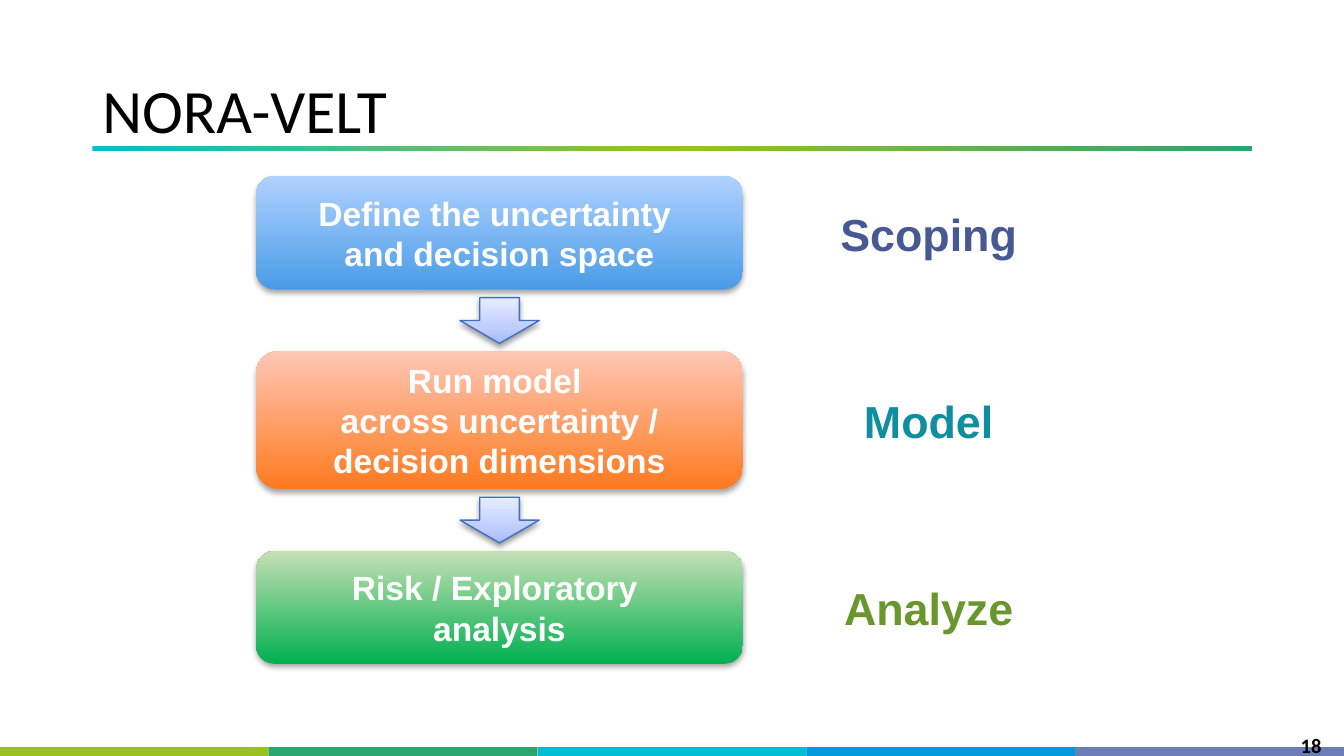
import copy
import pptx
import pptx.util
import pptx.dml.color
import pptx.enum.shapes
import pptx.enum.text
from lxml import etree

Pt = pptx.util.Pt
Kind = pptx.enum.shapes.MSO_SHAPE
Align = pptx.enum.text.PP_ALIGN
Anchor = pptx.enum.text.MSO_ANCHOR
rgb = pptx.dml.color.RGBColor.from_string
NS = "http://schemas.openxmlformats.org/drawingml/2006/main"


def paint(shape, stops, angle=0, shade=0):
    """Fill with one colour or gradient stops; shade is the shadow opacity in percent."""
    shape.shadow.inherit = False
    shape.line.fill.background()
    fill = shape.fill
    if len(stops) == 1:
        fill.solid()
        fill.fore_color.rgb = rgb(stops[0][1])
    else:
        fill.gradient()
        fill.gradient_angle = angle
        nodes = shape._element.spPr.find(f".//{{{NS}}}gsLst")
        for _ in stops[2:]:
            nodes.append(copy.deepcopy(nodes[0]))
        for stop, (place, color) in zip(fill.gradient_stops, stops):
            stop.position = place / 100
            stop.color.rgb = rgb(color)
    if shade:
        effects = shape._element.spPr.find(f"{{{NS}}}effectLst")
        effects.append(etree.fromstring(
            f'<a:outerShdw xmlns:a="{NS}" blurRad="{Pt(3.1)}" dist="{Pt(1.8)}" '
            f'dir="5400000" rotWithShape="0"><a:srgbClr val="000000">'
            f'<a:alpha val="{shade * 1000}"/></a:srgbClr></a:outerShdw>'))


def write(shape, paras, size, color, font="Arial", bold=True,
          align=Align.CENTER, anchor=Anchor.MIDDLE, inset=(7.2, 3.6)):
    """Fill the text frame; a newline inside a paragraph is a line break."""
    frame = shape.text_frame
    frame.word_wrap = True
    frame.vertical_anchor = anchor
    frame.margin_left = frame.margin_right = Pt(inset[0])
    frame.margin_top = frame.margin_bottom = Pt(inset[1])
    for i, text in enumerate(paras):
        para = frame.add_paragraph() if i else frame.paragraphs[0]
        para.alignment = align
        for j, line in enumerate(text.split("\n")):
            if j:
                para.add_line_break()
            run = para.add_run()
            run.text = line
            run.font.name = font
            run.font.size = Pt(size)
            run.font.bold = bold
            run.font.color.rgb = rgb(color)


deck = pptx.Presentation()
deck.slide_width, deck.slide_height = Pt(720), Pt(405)
slide = deck.slides.add_slide(deck.slide_layouts[5])
shapes = slide.shapes

# Title and rule
title = shapes.title
title.left, title.top, title.width, title.height = Pt(49.5), Pt(21.6), Pt(621), Pt(78.3)
write(title, ["NORA-VELT"], 33, "000000", "Calibri", False, Align.LEFT, inset=(5.4, 2.7))
title.text_frame.paragraphs[0].line_spacing = 0.9
rule = shapes.add_shape(Kind.RECTANGLE, Pt(49.5), Pt(78.3), Pt(621), Pt(2.7))
paint(rule, [(0, "00BDD5"), (50, "98C31F"), (100, "27A670")])

# Footer band
for i, color in enumerate(["98C31F", "27A670", "00BDD5", "0199DD", "6B7DB7"]):
    band = shapes.add_shape(Kind.RECTANGLE, Pt(144 * i), Pt(400.3), Pt(144), Pt(4.7))
    paint(band, [(0, color)])

# Steps: top, height, bottom and top colours, text, stage, stage colour
steps = [
    (94.3, 60.8, "499CE7", "B0D2FF", ["Define the uncertainty \nand decision space"],
     "Scoping", "475993"),
    (188, 74, "FF7A1F", "FFC7B6",
     ["Run model \nacross uncertainty /\ndecision dimensions"], "Model", "108E9F"),
    (295.2, 60.5, "00B050", "C5E0B4", ["Risk / Exploratory ", "analysis"],
     "Analyze", "6A972D"),
]
for top, high, dark, light, text, stage, color in steps:
    box = shapes.add_shape(Kind.ROUNDED_RECTANGLE, Pt(137.2), Pt(top), Pt(260.8), Pt(high))
    paint(box, [(0, dark), (100, light)], 90, 35)
    write(box, text, 18, "FFFFFF")
    label = shapes.add_textbox(Pt(412.5), Pt(top + high / 2 - 18.5), Pt(170), Pt(37.4))
    write(label, [stage], 24, color, inset=(2.2, 2.2))

# Arrows below all steps but the last
for top, high, *_ in steps[:-1]:
    arrow = shapes.add_shape(Kind.DOWN_ARROW, Pt(246.4), Pt(top + high + 4.4), Pt(42.5), Pt(24.5))
    paint(arrow, [(0, "A6BBFF"), (35, "C0CEFF"), (100, "E7ECFF")], 90, 38)
    arrow.line.color.rgb = rgb("3F6FC3")
    arrow.line.width = Pt(0.75)

page = shapes.add_textbox(Pt(553), Pt(389.2), Pt(162), Pt(15.8))
write(page, ["18"], 11, "000000", "Calibri", align=Align.RIGHT, anchor=Anchor.TOP)

deck.save("out.pptx")
